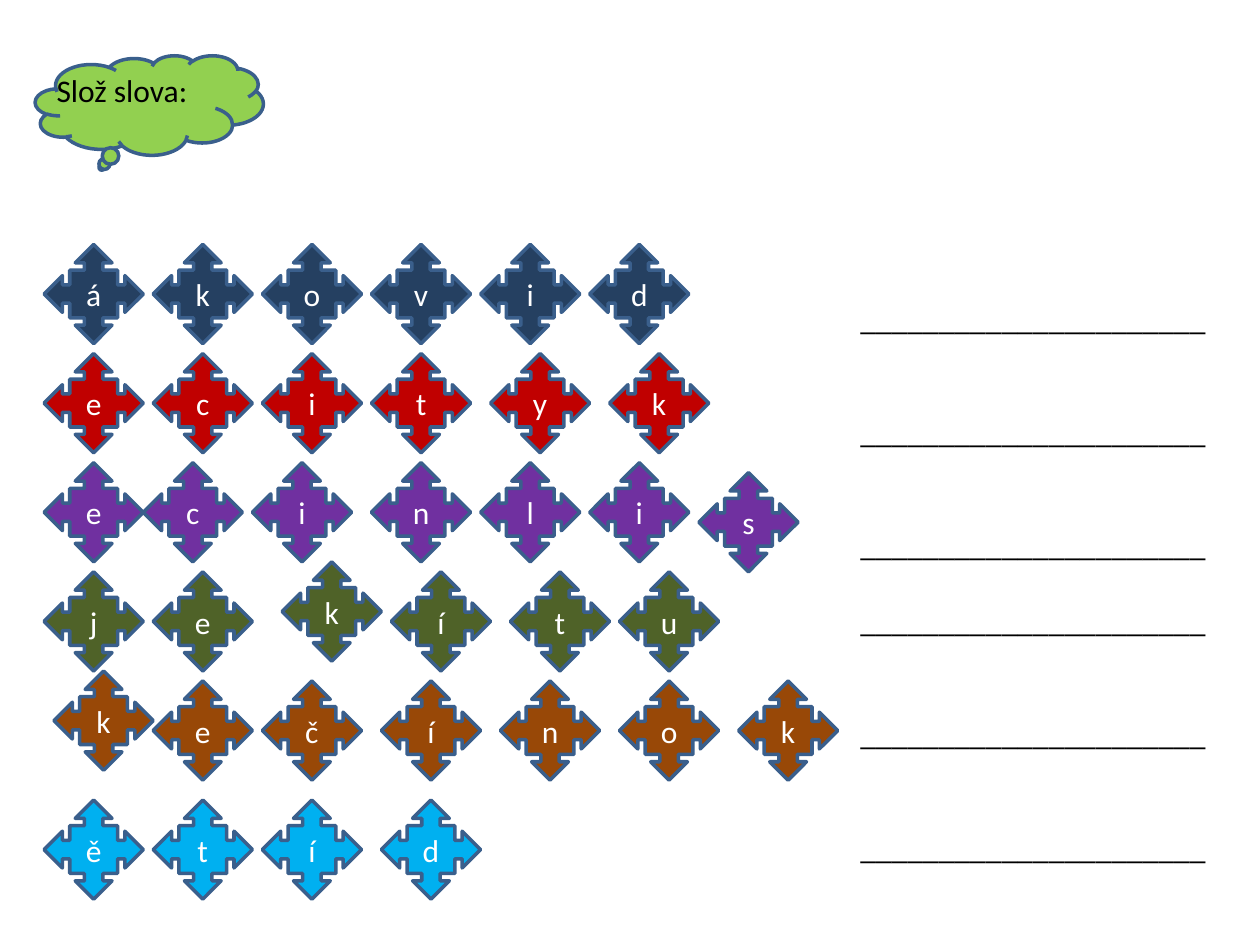
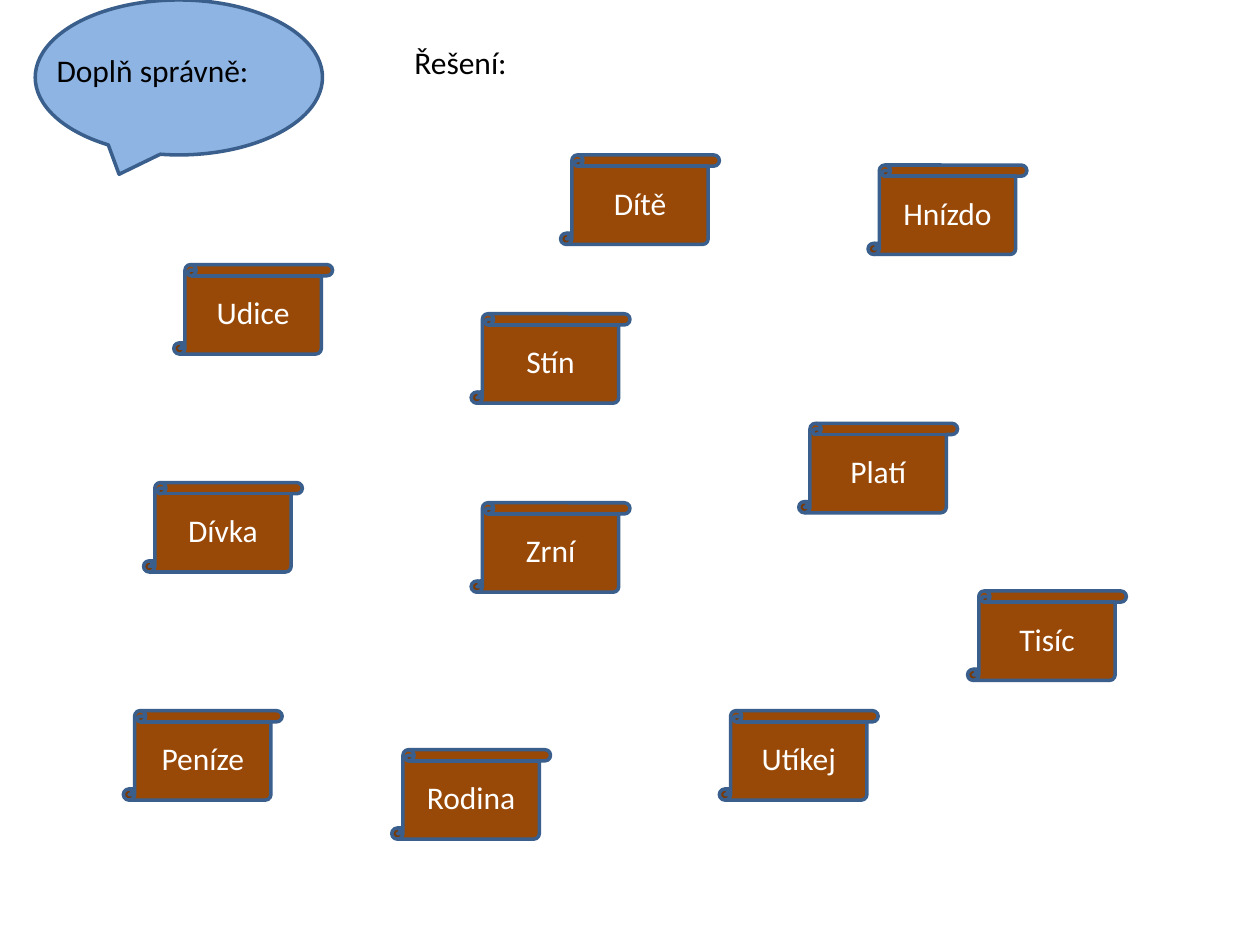
from pptx import Presentation
from pptx.dml.color import RGBColor
from pptx.enum.shapes import MSO_SHAPE as Preset
from pptx.enum.text import MSO_ANCHOR as Anchor, MSO_AUTO_SIZE as AutoSize, PP_ALIGN as Align
from pptx.util import Inches, Pt

BLACK = RGBColor(0x00, 0x00, 0x00)
WHITE = RGBColor(0xFF, 0xFF, 0xFF)
OUTLINE = RGBColor(0x3A, 0x5F, 0x8C)
LIME = RGBColor(0x92, 0xD0, 0x50)
SKY = RGBColor(0x8E, 0xB4, 0xE3)
NAVY = RGBColor(0x25, 0x40, 0x61)
RED = RGBColor(0xC0, 0x00, 0x00)
PURPLE = RGBColor(0x70, 0x30, 0xA0)
OLIVE = RGBColor(0x4F, 0x62, 0x28)
BROWN = RGBColor(0x98, 0x48, 0x07)
CYAN = RGBColor(0x00, 0xB0, 0xF0)

FONT = "Calibri"
TEXT_SIZE = Pt(18)
LINE_HEIGHT = Pt(21.6)
GRID = Inches(10 / 127)
TILE = 10 * GRID
TILE_STEP = 11 * GRID

LETTER_ROWS = [
    ("ákovid", NAVY, 0, [0, 0, 0, 0, 0, 0], {}),
    ("ecityk", RED, 11, [0, 0, 0, 0, 1, 2], {}),
    ("ecinlis", PURPLE, 22, [0, -1, -1, 0, 0, 0, 0], {6: 1}),
    ("jekítu", OLIVE, 33, [0, 0, 2, 2, 3, 3], {2: -1}),
    ("kečínok", BROWN, 44, [1, 0, 0, 1, 2, 3, 4], {0: -1}),
    ("ětíd", CYAN, 56, [0, 0, 0, 1], {}),
]
BLANK_LINES_BEFORE_ANSWER = [0, 2, 2, 1, 2, 2]
ANSWER_RULE = "_" * 22

SCROLLS = [
    ("Udice", 1.38, 2.10),
    ("Tisíc", 7.68, 4.69),
    ("Dítě", 4.45, 1.23),
    ("Stín", 3.74, 2.49),
    ("Dívka", 1.14, 3.83),
    ("Zrní", 3.74, 3.99),
    ("Peníze", 0.98, 5.64),
    ("Rodina", 3.11, 5.95),
    ("Utíkej", 5.71, 5.64),
    ("Platí", 6.34, 3.36),
    ("Hnízdo", 6.89, 1.31),
]


def style_text(frame, color):
    for para in frame.paragraphs:
        for span in para.runs:
            span.font.name = FONT
            span.font.size = TEXT_SIZE
            span.font.color.rgb = color


def add_figure(page, preset, box, fill, label=""):
    figure = page.shapes.add_shape(preset, *box)
    figure.shadow.inherit = False
    figure.fill.solid()
    figure.fill.fore_color.rgb = fill
    figure.line.color.rgb = OUTLINE
    figure.line.width = Pt(2)
    if label:
        frame = figure.text_frame
        frame.text = label
        frame.vertical_anchor = Anchor.MIDDLE
        frame.paragraphs[0].alignment = Align.CENTER
        style_text(frame, WHITE)


def add_text(page, box, text, lines_above=0):
    frame = page.shapes.add_textbox(*box).text_frame
    frame.word_wrap = True
    frame.auto_size = AutoSize.SHAPE_TO_FIT_TEXT
    frame.margin_top = Inches(0.05) + lines_above * LINE_HEIGHT
    frame.text = text
    style_text(frame, BLACK)
    return frame


def add_letter_tiles(page, left, top):
    for word, color, row_offset, nudges, lifts in LETTER_ROWS:
        for column, (letter, nudge) in enumerate(zip(word, nudges)):
            tile_left = left + column * TILE_STEP + nudge * GRID
            tile_top = top + (row_offset + lifts.get(column, 0)) * GRID
            box = (tile_left, tile_top, TILE, TILE)
            add_figure(page, Preset.QUAD_ARROW_CALLOUT, box, color, letter)


def add_answer_rules(page, box):
    rules = "\n".join([ANSWER_RULE] * len(BLANK_LINES_BEFORE_ANSWER))
    frame = add_text(page, box, rules, lines_above=1)
    for para, blank_lines in zip(frame.paragraphs, BLANK_LINES_BEFORE_ANSWER):
        para.space_before = blank_lines * LINE_HEIGHT


def add_scrolls(page, width, height):
    for word, left, top in SCROLLS:
        box = (Inches(left), Inches(top), width, height)
        add_figure(page, Preset.VERTICAL_SCROLL, box, BROWN, word)


def inches(*lengths):
    return tuple(Inches(length) for length in lengths)


def build_word_puzzle(page):
    add_figure(page, Preset.CLOUD_CALLOUT, inches(0.28, 0.44, 1.81, 0.79), LIME)
    add_text(page, inches(0.35, 0.21, 3.62, 0.71), "Slož slova:", lines_above=1)
    add_letter_tiles(page, *inches(0.35, 1.94))
    add_answer_rules(page, inches(6.73, 2.02, 2.99, 4.95))


def build_solution(page):
    add_figure(page, Preset.OVAL_CALLOUT, inches(0.28, 0, 2.28, 1.23), SKY)
    add_text(page, inches(0.35, 0.36, 3.15, 0.4), "Doplň správně:")
    add_scrolls(page, *inches(1.26, 0.71))
    add_text(page, inches(3.19, 0.29, 1.81, 0.4), "Řešení:")


def main():
    deck = Presentation()
    deck.slide_width, deck.slide_height = inches(10, 7.5)
    for build in (build_word_puzzle, build_solution):
        build(deck.slides.add_slide(deck.slide_layouts[6]))
    deck.save("out.pptx")


if __name__ == "__main__":
    main()
